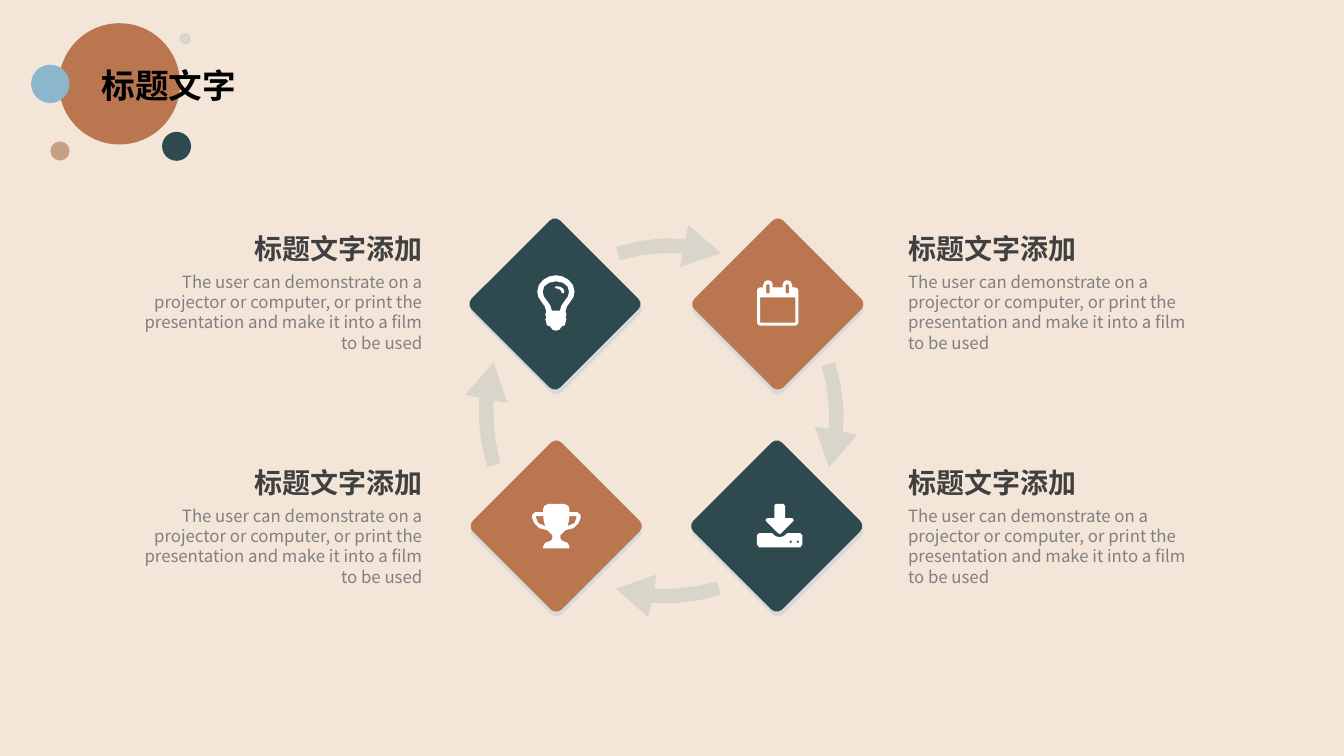
"""Build a slide with a four-step cycle of diamonds, icons and captions."""
from lxml import etree
from pptx import Presentation
from pptx.dml.color import RGBColor
from pptx.enum.shapes import MSO_SHAPE
from pptx.enum.text import MSO_ANCHOR, PP_ALIGN
from pptx.oxml.ns import qn
from pptx.util import Pt

CIRCLE, ROUNDED = MSO_SHAPE.OVAL, MSO_SHAPE.ROUNDED_RECTANGLE
LEFT, RIGHT, TOP = PP_ALIGN.LEFT, PP_ALIGN.RIGHT, MSO_ANCHOR.TOP
FONT = "Noto Sans CJK SC"
UNIT = 0.72
COLORS = {
    "sand": "F3E5D8", "copper": "BA764F", "sky": "8BB6CB", "tan": "C5A086",
    "teal": "2E4A4E", "stone": "D9D5CA", "shade": "D9D9D9", "white": "FFFFFF",
    "title": "000000", "heading": "404040", "body": "808080",
}
TEXT_STYLES = {
    "title": ({"size": Pt(24), "bold": True, "name": FONT}, 28.8),
    "heading": ({"size": Pt(20), "bold": True, "name": FONT}, 24.4),
    "body": ({"size": Pt(12), "bold": False, "name": FONT}, 14.5),
}

deck = Presentation()
deck.slide_width, deck.slide_height = Pt(960), Pt(540)
page = deck.slides.add_slide(deck.slide_layouts[5])
page.background.fill.solid()
page.background.fill.fore_color.rgb = RGBColor.from_string(COLORS["sand"])


def paint(shape, color):
    shape.fill.solid()
    shape.fill.fore_color.rgb = RGBColor.from_string(COLORS[color])
    shape.line.fill.background()
    shape.shadow.inherit = False


def write_text(box, text, style, align, wrap):
    frame = box.text_frame
    frame.word_wrap = wrap
    frame.vertical_anchor = TOP
    para = frame.paragraphs[0]
    para.alignment = align
    span = para.add_run()
    span.text = text
    font_values, line_height = TEXT_STYLES[style]
    para.line_spacing = Pt(line_height)
    for name, value in font_values.items():
        setattr(span.font, name, value)
    span.font.color.rgb = RGBColor.from_string(COLORS[style])
    etree.SubElement(span._r.get_or_add_rPr(), qn("a:ea"), typeface=FONT)


for left, top, size, color in [
    (42, 16.6, 86.6, "copper"),
    (22.2, 46.2, 27.4, "sky"),
    (36, 101, 13.7, "tan"),
    (115.8, 94.2, 20.7, "teal"),
    (128.2, 23.5, 8.2, "stone"),
]:
    circle = page.shapes.add_shape(CIRCLE, Pt(left), Pt(top), Pt(size), Pt(size))
    paint(circle, color)

title = page.shapes.title
title.left, title.top, title.width, title.height = Pt(65.5), Pt(42.8), Pt(111.6), Pt(36)
write_text(title, "标题文字", "title", LEFT, False)
page.shapes.element.append(title.element)

ARROW = [
    (-52, 1.5), (-29.4, -4.1), (-6.2, -6.9), (17, -6.5), (20, -20.5), (52, 7.5),
    (12, 21.5), (14, 7.5), (-7, 7.7), (-27.5, 10), (-48, 14.5),
]
outlines = [
    ([ARROW], center_x, center_y, 90 * turn, "stone")
    for turn, (center_x, center_y) in enumerate(
        [(477.4, 175.3), (597.2, 295.9), (477.4, 425.2), (347.4, 295.9)]
    )
]

SIDE = 89.6
for center_x, center_y, shade_x, color in [
    (396.4, 217.2, 397.3, "teal"),
    (555.6, 217.2, 555.6, "copper"),
    (554.8, 375.8, 555.6, "teal"),
    (397.3, 375.8, 397.3, "copper"),
]:
    for x, y, fill in [(shade_x, center_y + 3.6, "shade"), (center_x, center_y, color)]:
        diamond = page.shapes.add_shape(
            ROUNDED, Pt(x - SIDE / 2), Pt(y - SIDE / 2), Pt(SIDE), Pt(SIDE)
        )
        diamond.adjustments[0] = 0.06
        diamond.rotation = 45
        paint(diamond, fill)

BULB = {
    "halves": [
        [(0, 0), (6.7, 1.2), (12.6, 4.6), (16.9, 9.7), (18.5, 16), (17.5, 21.5),
         (14.5, 26), (11, 31), (9.5, 36), (10.5, 39), (9.5, 42), (10.5, 43.5),
         (9.5, 47), (9, 49.5), (5.5, 51), (3.5, 54), (0, 55)],
        [(0, 6), (7, 7.5), (11.5, 11), (13, 16), (12, 21), (9, 25), (5.5, 30), (4, 35)],
    ],
    "pairs": [],
    "singles": [[(7.5, 18), (8.5, 16), (7, 13), (4, 11.3), (0, 11), (-1, 12),
                 (0, 13), (3, 13.6), (5, 15.2), (5.5, 17)]],
}
CALENDAR = {
    "halves": [
        [(0, 7), (5, 7), (5, 4), (6.2, 1.2), (8.5, 0), (10.5, 0), (13, 1.3),
         (14.5, 5), (14.5, 7), (17.5, 7), (19.6, 8), (20.5, 10), (20.5, 42),
         (19.6, 44), (17.5, 45), (0, 45)],
        [(0, 17), (17.5, 17), (17.5, 42), (0, 42)],
    ],
    "pairs": [[(8, 5), (8.5, 4), (10.5, 4), (11.5, 5), (11.5, 12), (10.5, 13),
               (8.5, 13), (8, 12)]],
    "singles": [],
}
DOWNLOAD = {
    "halves": [
        [(0, 33), (4, 32), (7.5, 29), (20.5, 29), (22.5, 31), (22.5, 40),
         (20.5, 43), (0, 43)],
        [(0, 0), (4, 0), (5.3, 2), (5.3, 14), (12.5, 14), (14, 16), (13.5, 17),
         (1.5, 29), (0, 30)],
    ],
    "pairs": [],
    "singles": [
        [(x - 1.5, 37.5), (x, 36), (x + 1.5, 37.5), (x, 39)] for x in (11, 18)
    ],
}
TROPHY = {
    "halves": [
        [(0, 0), (8, 0), (12, 2), (13, 5), (13, 8), (21, 8), (24, 11), (24, 14),
         (22, 19), (17, 24), (9, 26), (6, 29), (4, 31), (4, 34), (5, 36), (7, 37),
         (11, 38.5), (13, 42), (13, 44), (0, 44)],
    ],
    "pairs": [[(13, 12), (20, 12), (20, 14), (18, 19), (11, 22), (12.5, 17)]],
    "singles": [],
}
for icon, center_x, top in [
    (BULB, 397.1, 196.6), (CALENDAR, 555.5, 200.2),
    (DOWNLOAD, 556.9, 360), (TROPHY, 397.4, 360),
]:
    contours = [half + [(-x, y) for x, y in reversed(half)] for half in icon["halves"]]
    for contour in icon["pairs"]:
        contours += [contour, [(-x, y) for x, y in contour]]
    outlines.append((contours + icon["singles"], center_x, top, 0, "white"))

for contours, origin_x, origin_y, angle, color in outlines:
    builder = None
    for contour in contours:
        points = [(Pt(origin_x + x * UNIT), Pt(origin_y + y * UNIT)) for x, y in contour]
        if builder is None:
            builder = page.shapes.build_freeform(*points[0])
        else:
            builder.move_to(*points[0])
        builder.add_line_segments(points[1:], close=True)
    outline = builder.convert_to_shape()
    outline.rotation = angle
    paint(outline, color)

BODY = (
    "The user can demonstrate on a projector or computer, or print the "
    "presentation and make it into a film to be used"
)
for heading_left, body_left, align in [(641.5, 641.5, LEFT), (173.5, 84.2, RIGHT)]:
    for top in (161.3, 328.3):
        body = page.shapes.add_textbox(Pt(body_left), Pt(top + 29), Pt(224.6), Pt(65.5))
        write_text(body, BODY, "body", align, True)
        heading = page.shapes.add_textbox(Pt(heading_left), Pt(top), Pt(135.4), Pt(31.7))
        write_text(heading, "标题文字添加", "heading", align, False)

deck.save("out.pptx")
